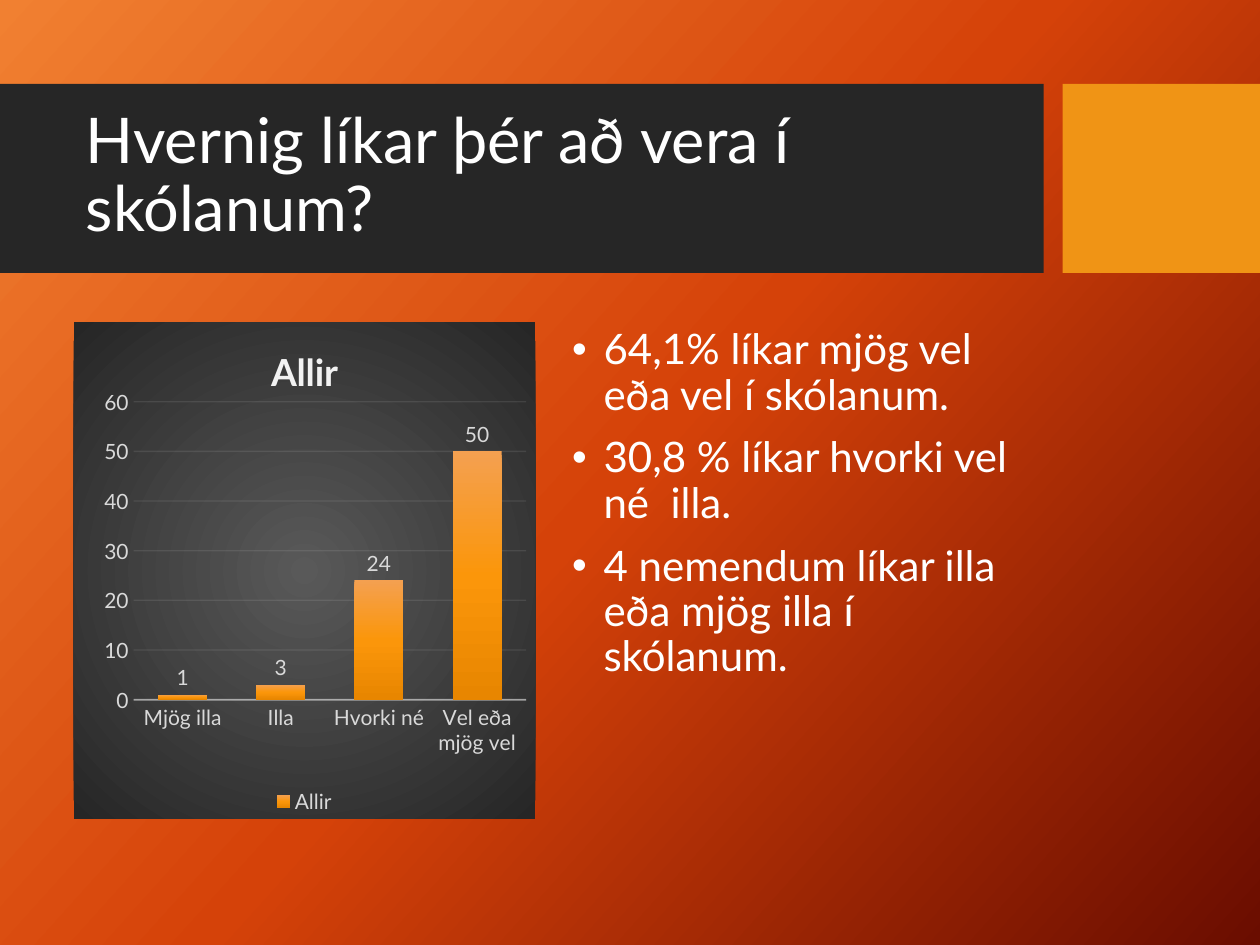
from lxml.etree import SubElement
from pptx import Presentation
from pptx.chart.data import CategoryChartData
from pptx.dml.color import RGBColor
from pptx.enum.chart import XL_CHART_TYPE, XL_LABEL_POSITION, XL_LEGEND_POSITION, XL_TICK_MARK
from pptx.enum.shapes import MSO_SHAPE
from pptx.enum.text import MSO_ANCHOR
from pptx.oxml import parse_xml
from pptx.oxml.ns import nsdecls, qn
from pptx.util import Inches, Pt

FONT = "Lato"
COLORS = {
    "band": "262626", "accent": "F09415", "text": "FFFFFF",
    "label": "D9D9D9", "line": "F2F2F2",
}
GRADIENTS = {
    "page": ["F18031", "D54209", "6A0D00"],
    "bar": ["F4A050", "FB960A", "E88600"],
    "chart": ["595959", "262626"],
}
COLUMNS, ROWS = 120, 90
WIDTH, HEIGHT = Inches(10), Inches(7.5)


def grid(column, row, columns, rows):
    return (round(WIDTH * column / COLUMNS), round(HEIGHT * row / ROWS),
            round(WIDTH * columns / COLUMNS), round(HEIGHT * rows / ROWS))


def color(name):
    return RGBColor.from_string(COLORS[name])


def style_font(font, size, name, bold=False):
    font.name = FONT
    font.size = Pt(size)
    font.bold = bold
    font.color.rgb = color(name)


def gradient(name, angle=None):
    stops = GRADIENTS[name]
    step = 100000 // (len(stops) - 1)
    marks = "".join(f'<a:gs pos="{index * step}"><a:srgbClr val="{stop}"/></a:gs>'
                    for index, stop in enumerate(stops))
    if angle is None:
        shade = ('<a:path path="circle"><a:fillToRect l="50000" t="50000" '
                 'r="50000" b="50000"/></a:path>')
    else:
        shade = f'<a:lin ang="{angle * 60000}" scaled="0"/>'
    return parse_xml(f'<a:gradFill {nsdecls("a")} rotWithShape="1">'
                     f'<a:gsLst>{marks}</a:gsLst>{shade}</a:gradFill>')


def replace_solid(properties, fill):
    properties.replace(properties.find(qn("a:solidFill")), fill)


def style_line(line, width, opacity):
    line.width = Pt(width)
    line.color.rgb = color("line")
    shade = line.fill._xPr.find(qn("a:solidFill"))[0]
    SubElement(shade, qn("a:alpha"), val=str(opacity * 1000))


def paint_background(page):
    page.background.fill.solid()
    replace_solid(page.element.find(".//" + qn("p:bgPr")), gradient("page", 42))


def add_block(page, box, name):
    block = page.shapes.add_shape(MSO_SHAPE.RECTANGLE, *box)
    block.shadow.inherit = False
    block.fill.solid()
    block.fill.fore_color.rgb = color(name)
    block.line.fill.background()


def add_text(page, box, lines, size, anchor=MSO_ANCHOR.TOP, bullets=False):
    frame = page.shapes.add_textbox(*box).text_frame
    frame.word_wrap = True
    frame.vertical_anchor = anchor
    for index, line in enumerate(lines):
        para = frame.paragraphs[0] if index == 0 else frame.add_paragraph()
        para.text = line
        para.line_spacing = 0.9
        if index:
            para.space_before = Pt(10)
        if bullets:
            properties = para._p.get_or_add_pPr()
            properties.set("marL", str(Inches(0.25)))
            properties.set("indent", str(-Inches(0.25)))
            SubElement(properties, qn("a:buFont"), typeface="Arial")
            SubElement(properties, qn("a:buChar"), char="•")
        style_font(para.font, size, "text")


def add_heading(page, left, top, text):
    add_block(page, grid(left, top, 99.4, 18), "band")
    add_block(page, grid(left + 101.2, top, 18.8, 18), "accent")
    add_text(page, grid(left + 7, top + 1.8, 90.4, 14.2), [text], 36, MSO_ANCHOR.MIDDLE)


def style_axes(chart):
    for axis in (chart.category_axis, chart.value_axis):
        axis.major_tick_mark = axis.minor_tick_mark = XL_TICK_MARK.NONE
        style_font(axis.tick_labels.font, 12, "label")
    style_line(chart.category_axis.format.line, 1, 54)
    values = chart.value_axis
    values.minimum_scale, values.maximum_scale, values.major_unit = 0, 60, 10
    values.format.line.fill.background()
    style_line(values.major_gridlines.format.line, 0.75, 10)


def place_plot(chart, x, y, w, h):
    area = chart._chartSpace.chart.plotArea
    for old in area.findall(qn("c:layout")):
        area.remove(old)
    sizes = "".join(f'<c:{tag} val="{share}"/>'
                    for tag, share in zip("xywh", (x, y, w, h)))
    area.insert(0, parse_xml(
        f'<c:layout {nsdecls("c")}><c:manualLayout><c:layoutTarget val="inner"/>'
        f'<c:xMode val="edge"/><c:yMode val="edge"/>{sizes}'
        '</c:manualLayout></c:layout>'))


def add_survey_chart(page, box, name, answers):
    data = CategoryChartData()
    data.categories = list(answers)
    data.add_series(name, list(answers.values()))
    chart = page.shapes.add_chart(XL_CHART_TYPE.COLUMN_CLUSTERED, *box, data).chart
    style_font(chart.font, 10, "text")

    panel = parse_xml(f'<c:spPr {nsdecls("c", "a")}><a:ln><a:noFill/></a:ln></c:spPr>')
    panel.insert(0, gradient("chart"))
    chart._chartSpace.chart.addnext(panel)

    chart.has_title = True
    title = chart.chart_title
    title.include_in_layout = False
    title.text_frame.text = name
    style_font(title.text_frame.paragraphs[0].font, 21.3, "line", True)

    chart.has_legend = True
    chart.legend.position = XL_LEGEND_POSITION.BOTTOM
    chart.legend.include_in_layout = False
    style_font(chart.legend.font, 12, "label")

    plot = chart.plots[0]
    plot.gap_width, plot.overlap = 100, -24
    plot.vary_by_categories = False
    plot.has_data_labels = True
    labels = plot.data_labels
    labels.show_value = True
    labels.position = XL_LABEL_POSITION.OUTSIDE_END
    style_font(labels.font, 12, "label")

    bars = plot.series[0]
    bars.invert_if_negative = False
    bars.format.fill.solid()
    replace_solid(bars._element.find(qn("c:spPr")), gradient("bar", 90))
    style_axes(chart)
    place_plot(chart, 0.13, 0.16, 0.85, 0.6)


def main():
    deck = Presentation()
    deck.slide_width, deck.slide_height = WIDTH, HEIGHT
    page = deck.slides.add_slide(deck.slide_layouts[6])
    paint_background(page)
    add_heading(page, 0, 8, "Hvernig líkar þér að vera í skólanum?")
    add_survey_chart(page, grid(7, 30.7, 44, 47.3), "Allir", {
        "Mjög illa": 1, "Illa": 3, "Hvorki né": 24, "Vel eða mjög vel": 50,
    })
    add_text(page, grid(53.3, 30.7, 44, 47.3), [
        "64,1% líkar mjög vel eða vel í skólanum.",
        "30,8 % líkar hvorki vel né  illa.",
        "4 nemendum líkar illa eða mjög illa í skólanum.",
    ], 24, bullets=True)
    deck.save("out.pptx")


if __name__ == "__main__":
    main()
